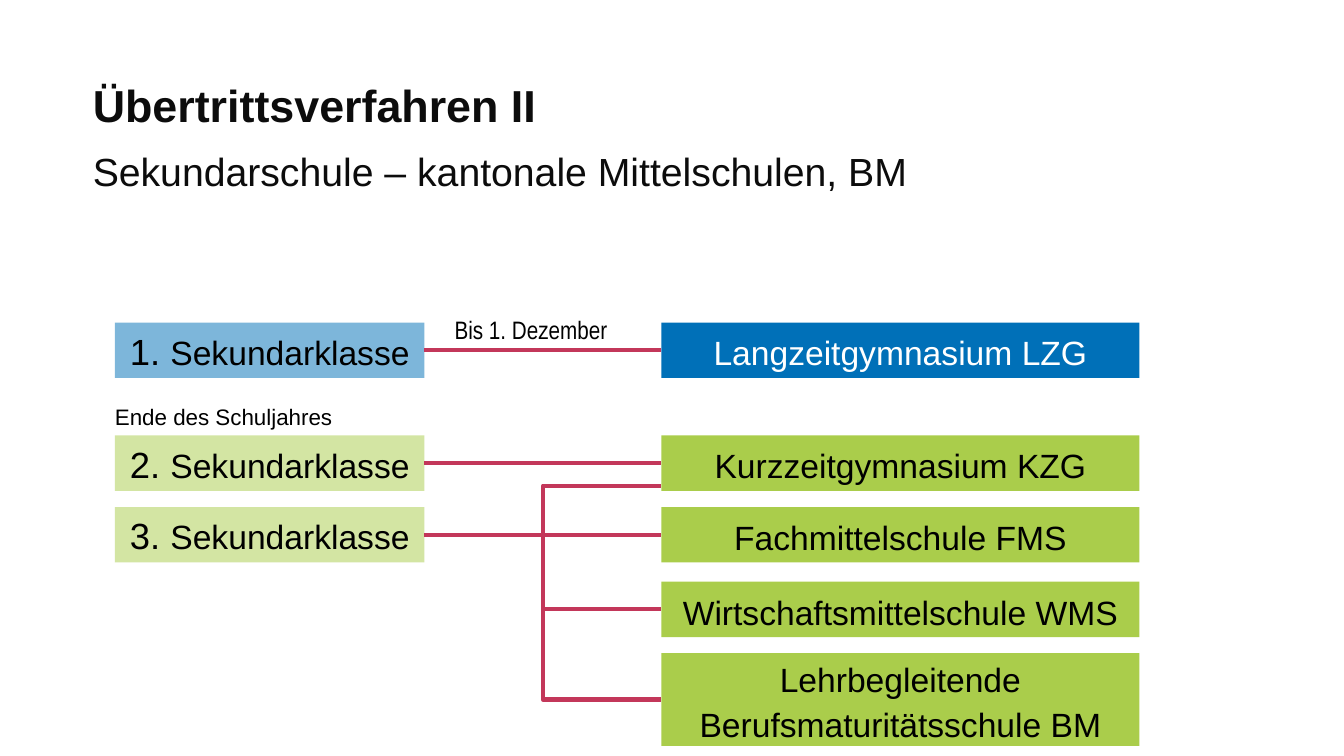
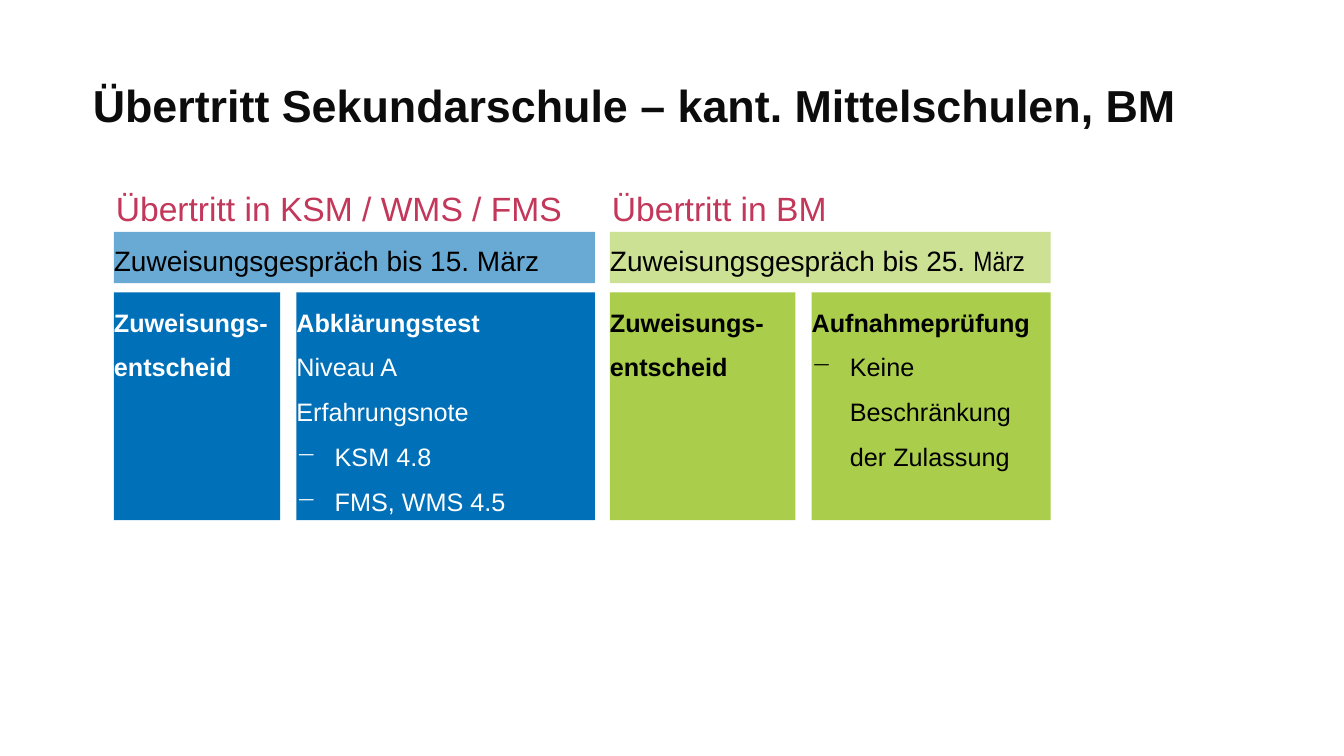
from lxml.etree import SubElement
from pptx import Presentation
from pptx.dml.color import RGBColor
from pptx.enum.shapes import MSO_CONNECTOR as LINK, MSO_SHAPE
from pptx.enum.text import MSO_ANCHOR as ANCHOR, MSO_AUTO_SIZE, PP_ALIGN as ALIGN
from pptx.oxml.ns import qn
from pptx.util import Inches, Pt

BLUE = RGBColor(0x00, 0x70, 0xB8)
GREEN = RGBColor(0xAA, 0xCD, 0x4B)
RED = RGBColor(0xC3, 0x37, 0x5A)
INK = RGBColor(0x0C, 0x0C, 0x0C)
BLACK = RGBColor(0x00, 0x00, 0x00)
WHITE = RGBColor(0xFF, 0xFF, 0xFF)
BOX_LINE = Pt(32)
LEFT_SIDE, RIGHT_SIDE = 1, 3
TITLE_AND_BODY, TITLE_ONLY = 1, 5


def write(frame, text, size=18, color=BLACK, bold=False, font="Arial",
          align=ALIGN.LEFT, spacing=1.0, dash=False, same_line=False):
    """Add text as a new paragraph, or as a further run of the last one."""
    paragraph = frame.paragraphs[-1]
    if not same_line:
        if paragraph.runs:
            paragraph = frame.add_paragraph()
        paragraph.alignment = align
        paragraph.line_spacing = spacing
        paragraph.space_before = Pt(0)
        properties = paragraph._p.get_or_add_pPr()
        indent = Inches(0.38) if dash else 0
        properties.set("marL", str(indent))
        properties.set("indent", str(-indent))
        if dash:
            SubElement(properties, qn("a:buChar")).set("char", "−")
        else:
            SubElement(properties, qn("a:buNone"))
    run = paragraph.add_run()
    run.text = text
    run.font.name, run.font.size, run.font.bold = font, Pt(size), bold
    run.font.color.rgb = color


def place(shape, left, top, width, height):
    """Move and size a shape, in inches."""
    shape.left, shape.top = Inches(left), Inches(top)
    shape.width, shape.height = Inches(width), Inches(height)


def fill_heading(placeholder, text, top, **style):
    """Place and fill a title or subtitle placeholder."""
    place(placeholder, 0.82, top, 11.75, 0.59)
    frame = placeholder.text_frame
    frame.auto_size = MSO_AUTO_SIZE.NONE
    frame.vertical_anchor = ANCHOR.MIDDLE
    write(frame, text, color=INK, spacing=0.9, **style)


def add_slide(deck, title, subtitle=None):
    """Add a slide with a title and an optional subtitle."""
    layout = TITLE_AND_BODY if subtitle else TITLE_ONLY
    slide = deck.slides.add_slide(deck.slide_layouts[layout])
    fill_heading(slide.shapes.title, title, 0.78, size=32, bold=True)
    if subtitle:
        fill_heading(slide.placeholders[1], subtitle, 1.43, size=28)
    return slide


def add_label(slide, text, left, top, width, height, inset=0.1, **style):
    """Add a free text label."""
    label = slide.shapes.add_textbox(
        Inches(left), Inches(top), Inches(width), Inches(height))
    frame = label.text_frame
    frame.word_wrap = True
    frame.margin_left = frame.margin_right = Inches(inset)
    frame.margin_top = frame.margin_bottom = Inches(inset / 2)
    write(frame, text, **style)


def add_box(slide, left, top, width, height, color, opacity=100, anchor=ANCHOR.TOP):
    """Add a plain filled rectangle without text margins."""
    box = slide.shapes.add_shape(
        MSO_SHAPE.RECTANGLE, Inches(left), Inches(top), Inches(width), Inches(height))
    box.shadow.inherit = False
    box.line.fill.background()
    box.fill.solid()
    box.fill.fore_color.rgb = color
    if opacity < 100:
        tint = box.fill._xPr.find(f"{qn('a:solidFill')}/{qn('a:srgbClr')}")
        SubElement(tint, qn("a:alpha")).set("val", str(opacity * 1000))
    frame = box.text_frame
    frame.word_wrap = True
    frame.vertical_anchor = anchor
    frame.margin_left = frame.margin_right = frame.margin_top = frame.margin_bottom = 0
    return box


def add_class(slide, number, top, color):
    """Add the box of one school year."""
    box = add_box(slide, 1.14, top, 3.07, 0.55, color, 51, ANCHOR.MIDDLE)
    write(box.text_frame, f"{number}. ", size=26, align=ALIGN.CENTER, spacing=BOX_LINE)
    write(box.text_frame, "Sekundarklasse", size=24, same_line=True)
    return box


def add_school(slide, name, top, height=0.55, color=GREEN, text_color=BLACK):
    """Add the box of one secondary school."""
    box = add_box(slide, 6.56, top, 4.74, height, color, anchor=ANCHOR.MIDDLE)
    write(box.text_frame, name, size=24, color=text_color,
          align=ALIGN.CENTER, spacing=BOX_LINE)
    return box


def link(slide, origin, target, kind=LINK.STRAIGHT, end_y=None):
    """Link two boxes, ending at the target's middle or at a given height."""
    start_y = origin.top + origin.height // 2
    stop_y = target.top + target.height // 2 if end_y is None else Inches(end_y)
    line = slide.shapes.add_connector(
        kind, origin.left + origin.width, start_y, target.left, stop_y)
    line.begin_connect(origin, RIGHT_SIDE)
    if end_y is None:
        line.end_connect(target, LEFT_SIDE)
    line.line.color.rgb = RED
    line.line.width = Pt(3)
    SubElement(line._element.spPr, qn("a:effectLst"))


def add_track(slide, left, heading, date, date_font, color, text_color, cards):
    """Add a heading, a date band and the cards below it."""
    gap = 0.16
    width = sum(card_width for card_width, _ in cards) + gap * (len(cards) - 1)
    add_label(slide, heading, left - 0.08, 1.82, width + 0.08, 0.5, size=24, color=RED)
    band = add_box(slide, left, 2.3, width, 0.51, color, 59).text_frame
    write(band, f"Zuweisungsgespräch bis {date} ", size=20, spacing=BOX_LINE)
    write(band, "März", size=20, font=date_font, same_line=True)
    for card_width, lines in cards:
        card = add_box(slide, left, 2.9, card_width, 2.26, color).text_frame
        for text, style in lines:
            write(card, text, color=text_color, spacing=BOX_LINE, **style)
        left += card_width + gap


def build_paths(deck):
    """Build the slide with the paths from school years to schools."""
    slide = add_slide(deck, "Übertrittsverfahren II",
                      "Sekundarschule – kantonale Mittelschulen, BM")
    first = add_class(slide, 1, 3.2, BLUE)
    second = add_class(slide, 2, 4.32, GREEN)
    third = add_class(slide, 3, 5.03, GREEN)
    add_label(slide, "Ende des Schuljahres", 1.14, 4, 2.6, 0.27, inset=0, size=16)
    add_label(slide, "Bis 1. Dezember", 4.41, 3.07, 2.12, 0.4, font="Arial Narrow")
    long_term = add_school(slide, "Langzeitgymnasium LZG", 3.2,
                           color=BLUE, text_color=WHITE)
    short_term = add_school(slide, "Kurzzeitgymnasium KZG", 4.32)
    technical = add_school(slide, "Fachmittelschule FMS", 5.03)
    business = add_school(slide, "Wirtschaftsmittelschule WMS", 5.77)
    vocational = add_school(slide, "Lehrbegleitende Berufsmaturitätsschule BM", 6.48, 0.92)
    for origin, target in ((first, long_term), (second, short_term), (third, technical)):
        link(slide, origin, target)
    for target, end_y in ((vocational, None), (short_term, 4.82), (business, None)):
        link(slide, third, target, LINK.ELBOW, end_y)


def build_conditions(deck):
    """Build the slide with the conditions of each track."""
    slide = add_slide(deck, "Übertritt Sekundarschule – kant. Mittelschulen, BM")
    strong, dashed = {"bold": True}, {"dash": True}
    decision = [("Zuweisungs-entscheid", strong)]
    test = [("Abklärungstest", strong), ("Niveau A", {}), ("Erfahrungsnote", {}),
            ("KSM 4.8", dashed), ("FMS, WMS 4.5", dashed)]
    exam = [("Aufnahmeprüfung", strong), ("Keine Beschränkung der Zulassung", dashed)]
    add_track(slide, 1.13, "Übertritt in KSM / WMS / FMS", "15.", "Arial",
              BLUE, WHITE, [(1.65, decision), (2.96, test)])
    add_track(slide, 6.05, "Übertritt in BM", "25.", "Arial Narrow",
              GREEN, BLACK, [(1.84, decision), (2.37, exam)])


def main():
    """Build and save the presentation."""
    deck = Presentation()
    deck.slide_width, deck.slide_height = Inches(13.33), Inches(7.5)
    build_paths(deck)
    build_conditions(deck)
    deck.save("out.pptx")


if __name__ == "__main__":
    main()
